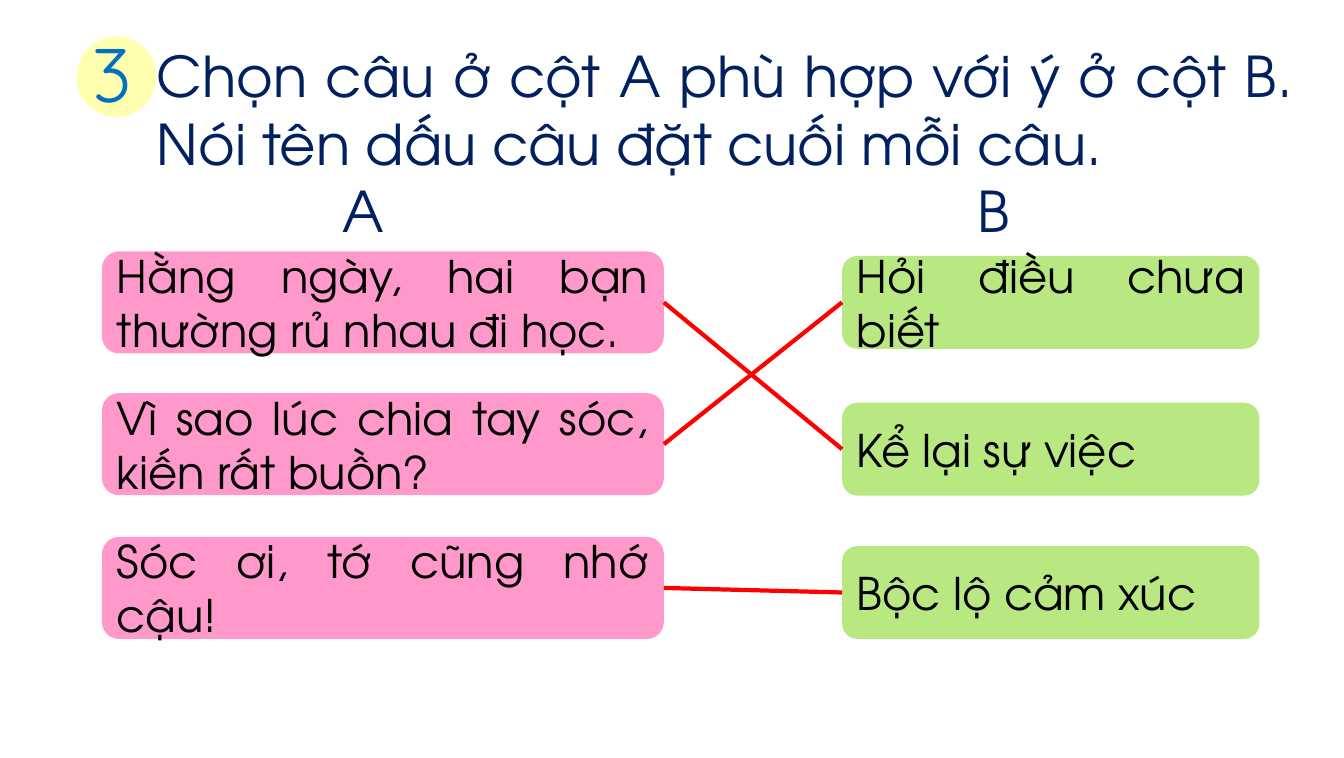
from lxml.etree import SubElement
from pptx import Presentation
from pptx.dml.color import RGBColor
from pptx.enum.shapes import MSO_CONNECTOR, MSO_SHAPE
from pptx.enum.text import MSO_ANCHOR, MSO_AUTO_SIZE, PP_ALIGN
from pptx.oxml.ns import qn
from pptx.util import Pt


def write(box, text, size, color="002060", font="TeX Gyre Adventor",
          align=PP_ALIGN.JUSTIFY, anchor=MSO_ANCHOR.TOP, inset=None):
    frame = box.text_frame
    frame.word_wrap = True
    frame.auto_size = MSO_AUTO_SIZE.NONE
    frame.vertical_anchor = anchor
    if inset is not None:
        frame.margin_left = frame.margin_right = Pt(inset)
        frame.margin_top = frame.margin_bottom = Pt(inset)
    para = frame.paragraphs[0]
    para.alignment = align
    span = para.add_run()
    span.text = text
    span.font.name = font
    span.font.size = Pt(size)
    span.font.color.rgb = RGBColor.from_string(color)


def add_filled(kind, left, top, width, height, color):
    shape = page.shapes.add_shape(kind, Pt(left), Pt(top), Pt(width), Pt(height))
    shape.shadow.inherit = False
    shape.fill.solid()
    shape.fill.fore_color.rgb = RGBColor.from_string(color)
    shape.line.fill.background()
    return shape


deck = Presentation()
deck.slide_width, deck.slide_height = Pt(957.6), Pt(540)
page = deck.slides.add_slide(deck.slide_layouts.get_by_name("Title Only"))

# Question with its number
title = page.shapes.title
title.left, title.top, title.width, title.height = Pt(104.4), Pt(26), Pt(824.4), Pt(104.4)
write(title, "Chọn câu ở cột A phù hợp với ý ở cột B. Nói tên dấu câu đặt cuối mỗi câu.", 40)

add_filled(MSO_SHAPE.OVAL, 54.5, 26, 57, 57.5, "FFFFAF")
number = page.shapes.add_textbox(Pt(56.2), Pt(33), Pt(57.6), Pt(37.4))
write(number, "3", 54, color="0070C0", font="Quicksand", anchor=MSO_ANCHOR.MIDDLE, inset=9.4)

# Columns: heading, heading left, card left, width, height, colour, cards (top, text)
columns = [
    ("A", 221, 72.7, 400.3, 72.7, "FF99CC", [
        (179.1, "Hằng ngày, hai bạn thường rủ nhau đi học."),
        (280.1, "Vì sao lúc chia tay sóc, kiến rất buồn?"),
        (382.5, "Sóc ơi, tớ cũng nhớ cậu!")]),
    ("B", 670.3, 600, 297.4, 66.2, "B9E781", [
        (182.3, "Hỏi điều chưa biết"),
        (286.9, "Kể lại sự việc"),
        (389, "Bộc lộ cảm xúc")]),
]
cards = {}
for name, heading_left, left, width, height, color, entries in columns:
    heading = page.shapes.add_textbox(Pt(heading_left), Pt(122.4), Pt(75.6), Pt(55.4))
    write(heading, name, 40, align=PP_ALIGN.CENTER)
    cards[name] = []
    for top, text in entries:
        card = add_filled(MSO_SHAPE.ROUNDED_RECTANGLE, left, top, width, height, color)
        write(card, text, 32, color="000000", anchor=MSO_ANCHOR.MIDDLE)
        cards[name].append(card)

# Matching lines: row in column A, row in column B
for row_a, row_b in [(0, 1), (2, 2), (1, 0)]:
    match = page.shapes.add_connector(MSO_CONNECTOR.STRAIGHT, 0, 0, 0, 0)
    match.begin_connect(cards["A"][row_a], 3)
    match.end_connect(cards["B"][row_b], 1)
    match.line.color.rgb = RGBColor.from_string("FF0000")
    match.line.width = Pt(3)
    SubElement(match._element.spPr, qn("a:effectLst"))

deck.save("out.pptx")
